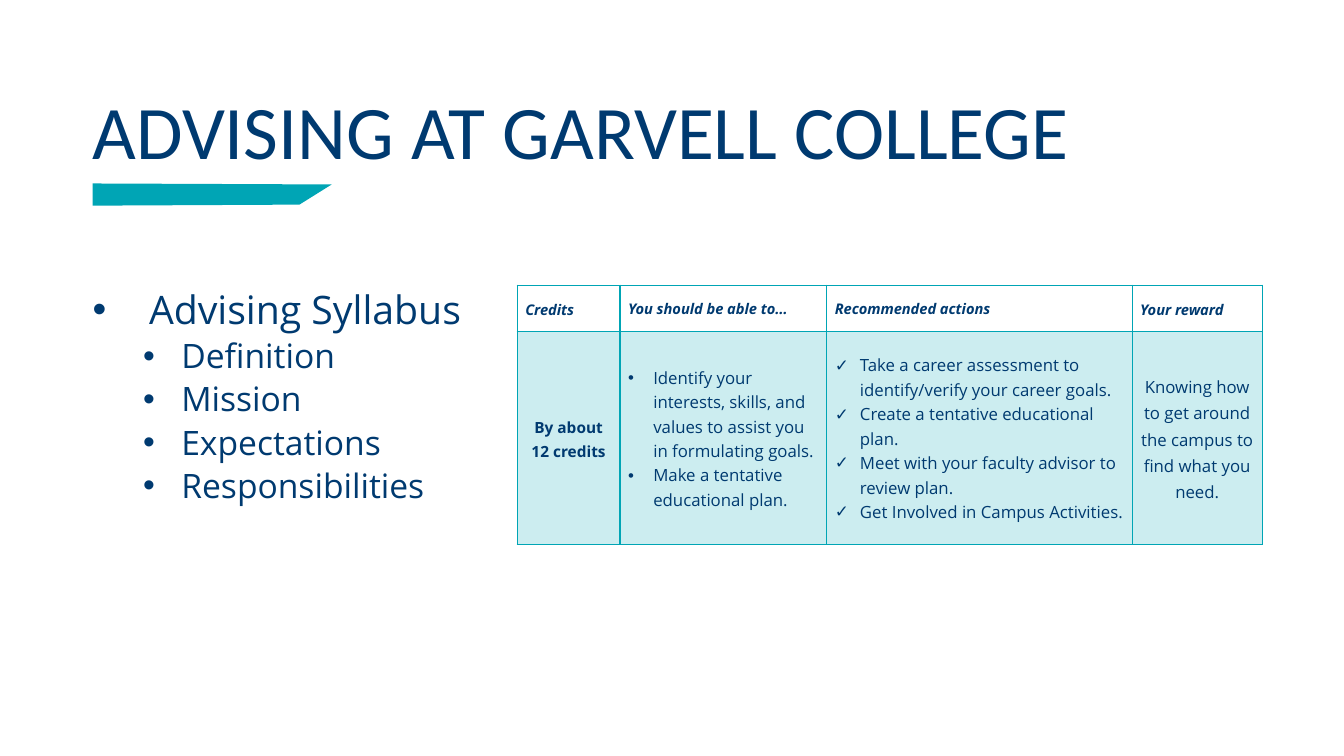
"""Build the college advising slide: heading, syllabus outline and credits table."""
from dataclasses import dataclass

from lxml import etree
from pptx import Presentation
from pptx.dml.color import RGBColor
from pptx.enum.text import MSO_ANCHOR, PP_ALIGN
from pptx.oxml import parse_xml
from pptx.oxml.ns import nsdecls, qn
from pptx.util import Inches, Pt

LEFT, CENTER = PP_ALIGN.LEFT, PP_ALIGN.CENTER
MIDDLE, BOTTOM = MSO_ANCHOR.MIDDLE, MSO_ANCHOR.BOTTOM


@dataclass(frozen=True)
class Theme:
    navy: RGBColor = RGBColor.from_string("003A70")
    teal: RGBColor = RGBColor.from_string("00A5B5")
    heading_font: str = "Calibri"
    body_font: str = "Open Sans"
    title_size: float = 54
    topic_size: float = 28
    subtopic_size: float = 24
    header_size: float = 10.5
    credits_size: float = 11
    cell_size: float = 12


theme = Theme()


def format_paragraph(paragraph, size, font=theme.body_font, bold=False, italic=False,
                     align=LEFT, spacing=1.0, before=0, after=0):
    paragraph.alignment = align
    paragraph.line_spacing = spacing
    paragraph.space_before, paragraph.space_after = Pt(before), Pt(after)
    for run in paragraph.runs:
        run.font.name, run.font.size = font, Pt(size)
        run.font.bold, run.font.italic = bold, italic
        run.font.color.rgb = theme.navy


def add_bullet(paragraph, character, margin, hanging):
    properties = paragraph._p.get_or_add_pPr()
    properties.set("marL", str(Inches(margin)))
    properties.set("indent", str(-Inches(hanging)))
    etree.SubElement(properties, qn("a:buFont")).set("typeface", "Arial")
    etree.SubElement(properties, qn("a:buChar")).set("char", character)


presentation = Presentation()
presentation.slide_width, presentation.slide_height = Inches(13.33), Inches(7.5)
slide = presentation.slides.add_slide(presentation.slide_layouts[5])

builder = slide.shapes.build_freeform(Inches(0.92), Inches(1.82))
builder.add_line_segments(
    [(Inches(x), Inches(y)) for x, y in [(3.29, 1.83), (2.97, 2.03), (0.92, 2.04)]])
accent = builder.convert_to_shape()
accent.shadow.inherit = False
accent.fill.solid()
accent.fill.fore_color.rgb = theme.teal
accent.line.fill.background()

title = slide.shapes.title
title.left, title.top = Inches(0.82), Inches(0.7)
title.width, title.height = Inches(11.69), Inches(1.09)
title.text_frame.text = "ADVISING AT GARVELL COLLEGE"
title.text_frame.vertical_anchor = BOTTOM
format_paragraph(title.text_frame.paragraphs[0], theme.title_size,
                 font=theme.heading_font, spacing=0.9)

column_widths = [1.02, 2.05, 3.03, 1.29]
row_heights = [0.46, 2.11]
headers = ["Credits", "You should be able to…", "Recommended actions", "Your reward"]
details = [
    ["By about 12 credits"],
    ["Identify your interests, skills, and values to assist you in formulating goals.",
     "Make a tentative educational plan."],
    ["Take a career assessment to identify/verify your career goals.",
     "Create a tentative educational plan.",
     "Meet with your faculty advisor to review plan.",
     "Get Involved in Campus Activities."],
    ["Knowing how to get around the campus to find what you need."],
]
bullets = [None, "•", "✓", None]

table = slide.shapes.add_table(2, 4, Inches(5.13), Inches(2.83), Inches(sum(column_widths)),
                               Inches(sum(row_heights))).table
table.first_row = table.horz_banding = False
for column, width in zip(table.columns, column_widths):
    column.width = Inches(width)
for row, height in zip(table.rows, row_heights):
    row.height = Inches(height)

for index, (header, lines, bullet) in enumerate(zip(headers, details, bullets)):
    header_cell, detail_cell = table.cell(0, index), table.cell(1, index)
    spacing, after = (1.07, 0) if bullet else (1.15, 10)

    header_cell.text_frame.text = header
    format_paragraph(header_cell.text_frame.paragraphs[0], theme.header_size,
                     bold=True, italic=True, spacing=spacing, after=after)
    header_cell.fill.background()

    detail_cell.text_frame.text = "\n".join(lines)
    for paragraph in detail_cell.text_frame.paragraphs:
        format_paragraph(paragraph, theme.cell_size if index else theme.credits_size,
                         bold=index == 0, align=LEFT if bullet else CENTER,
                         spacing=spacing, after=after)
        if bullet:
            add_bullet(paragraph, bullet, 0.25, 0.25)
    detail_cell.fill.solid()
    detail_cell.fill.fore_color.rgb = theme.teal
    color = detail_cell._tc.tcPr.find(".//" + qn("a:srgbClr"))
    etree.SubElement(color, qn("a:alpha")).set("val", "20000")

    for cell in (header_cell, detail_cell):
        cell.vertical_anchor = MIDDLE
        cell.margin_left = cell.margin_right = Inches(0.08)
        cell.margin_top = cell.margin_bottom = Inches(0.05)
        for position, side in enumerate(["lnL", "lnR", "lnT", "lnB"]):
            cell._tc.tcPr.insert(position, parse_xml(
                f'<a:{side} {nsdecls("a")} w="{Pt(1)}"><a:solidFill>'
                f'<a:srgbClr val="{theme.teal}"/></a:solidFill></a:{side}>'))

outline = slide.shapes.add_textbox(Inches(0.82), Inches(2.83), Inches(11.69), Inches(4.1))
outline.text_frame.word_wrap = True
outline.text_frame.text = "\n".join(
    ["Advising Syllabus", "Definition", "Mission", "Expectations", "Responsibilities"])
topic, *subtopics = outline.text_frame.paragraphs
format_paragraph(topic, theme.topic_size, spacing=0.9, before=10)
add_bullet(topic, "•", 0.56, 0.56)
for subtopic in subtopics:
    subtopic.level = 1
    format_paragraph(subtopic, theme.subtopic_size, spacing=0.9, before=5)
    add_bullet(subtopic, "•", 0.88, 0.38)

presentation.save("out.pptx")
